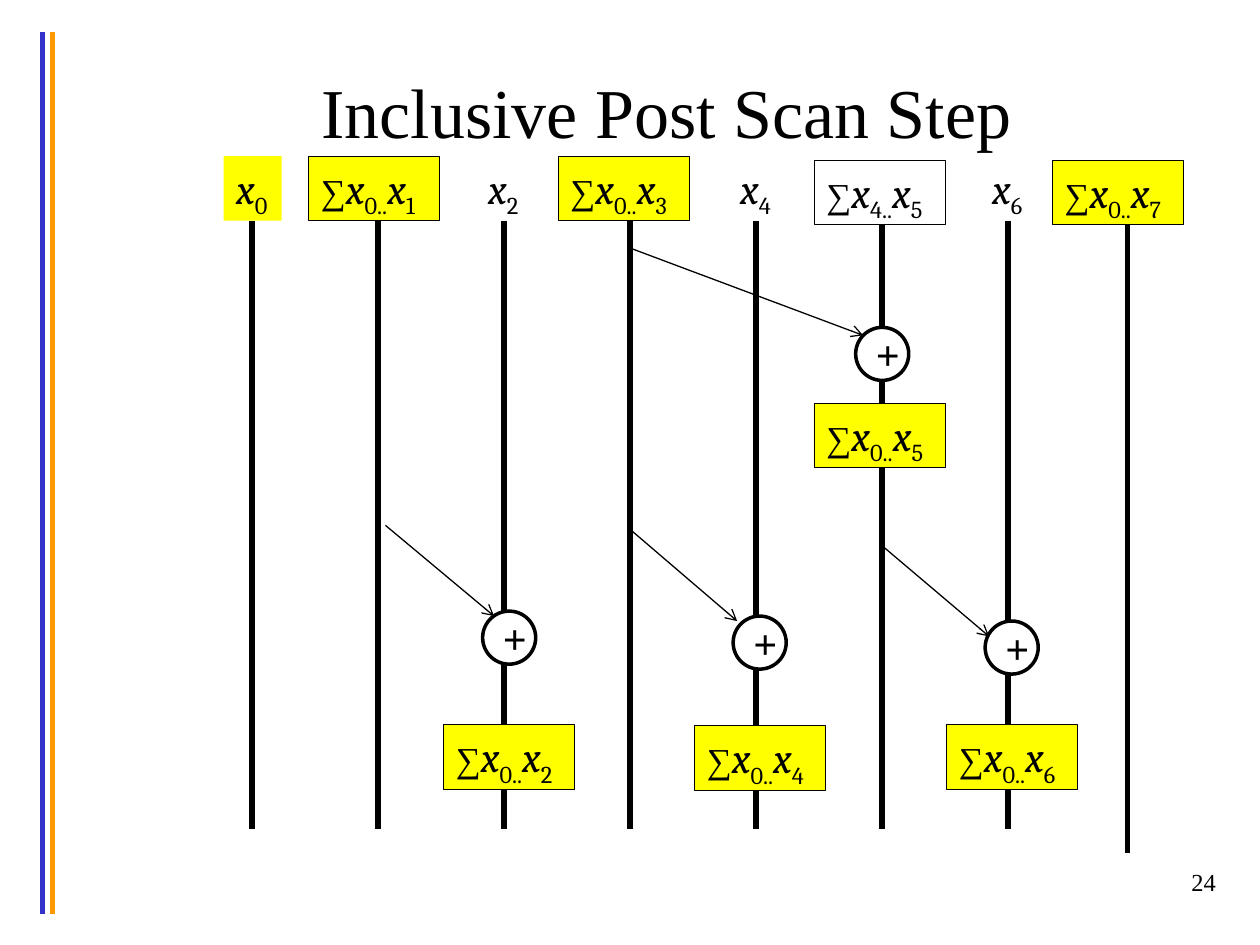
from pptx import Presentation
from pptx.dml.color import RGBColor
from pptx.enum.shapes import MSO_CONNECTOR, MSO_SHAPE
from pptx.enum.text import MSO_ANCHOR, MSO_AUTO_SIZE, PP_ALIGN
from pptx.oxml.ns import qn
from pptx.util import Cm, Pt
from lxml import etree

STRAIGHT = MSO_CONNECTOR.STRAIGHT
OVAL = MSO_SHAPE.OVAL
MIDDLE = MSO_ANCHOR.MIDDLE
GROW = MSO_AUTO_SIZE.SHAPE_TO_FIT_TEXT
CENTER, RIGHT = PP_ALIGN.CENTER, PP_ALIGN.RIGHT
SERIF, MATH = "Times New Roman", "Cambria"
BLACK, WHITE, YELLOW = "000000", "FFFFFF", "FFFF00"


def rgb(value):
    return RGBColor.from_string(value)


def draw_line(page, start, end, width, color=BLACK):
    line = page.shapes.add_connector(
        STRAIGHT, Cm(start[0]), Cm(start[1]), Cm(end[0]), Cm(end[1]))
    line.line.width = Pt(width)
    line.line.color.rgb = rgb(color)
    etree.SubElement(line._element.spPr, qn("a:effectLst"))
    return line


deck = Presentation()
deck.slide_width, deck.slide_height = Cm(25.4), Cm(19.05)
page = deck.slides.add_slide(deck.slide_layouts[5])

for x, color in [(0.85, "3333CC"), (1.06, "FF9900")]:
    draw_line(page, (x, 0.64), (x, 18.42), 3, color)

title = page.shapes.title
title.left, title.top, title.width, title.height = Cm(1.9), Cm(0.64), Cm(23.07), Cm(3.18)
title.text_frame.text = "Inclusive Post Scan Step"
title.text_frame.vertical_anchor = MIDDLE
number = page.shapes.add_textbox(Cm(19.47), Cm(17.36), Cm(5.29), Cm(1.27))
number.text_frame.word_wrap = True
number.text_frame.text = "24"
for box, size, align in [(title, 40, CENTER), (number, 14, RIGHT)]:
    para = box.text_frame.paragraphs[0]
    para.alignment = align
    para.font.name, para.font.size = SERIF, Pt(size)
    para.font.color.rgb = rgb(BLACK)

columns = [5.08 + 2.54 * i for i in range(7)]
for x in columns:
    draw_line(page, (x, 4.45), (x, 16.71), 3)
draw_line(page, (22.73, 4.5), (22.73, 17.2), 3)

labels = [(columns[i] - 0.57, 3.15, None, i, None if i else YELLOW) for i in (0, 2, 4, 6)]
labels += [
    (6.22, 3.15, 0, 1, YELLOW),
    (11.25, 3.15, 0, 3, YELLOW),
    (16.41, 3.23, 4, 5, WHITE),
    (21.21, 3.23, 0, 7, YELLOW),
    (16.41, 8.13, 0, 5, YELLOW),
    (8.94, 14.61, 0, 2, YELLOW),
    (14, 14.63, 0, 4, YELLOW),
    (19.08, 14.61, 0, 6, YELLOW),
]
for left, top, first, last, fill in labels:
    is_sum = first is not None
    box = page.shapes.add_textbox(Cm(left), Cm(top), Cm(2.64 if is_sum else 1.17), Cm(1.3))
    box.text_frame.word_wrap = False
    box.text_frame.auto_size = GROW
    if fill:
        box.fill.solid()
        box.fill.fore_color.rgb = rgb(fill)
    parts = ["x", str(last)]
    if is_sum:
        box.line.color.rgb = rgb(BLACK)
        box.line.width = Pt(0.25)
        parts = ["∑", "x", f"{first}.."] + parts
    para = box.text_frame.paragraphs[0]
    para.font.color.rgb = rgb(BLACK)
    for part in parts:
        span = para.add_run()
        span.text = part
        span.font.name = SERIF if part == "∑" else MATH
        span.font.size = Pt(20 if part == "∑" else 24)
        span.font.italic = part in ("∑", "x")
        if part not in ("∑", "x"):
            span._r.get_or_add_rPr().set("baseline", "-25000")

for left, top in [(17.25, 6.6), (9.73, 12.32), (14.78, 12.42), (19.86, 12.52)]:
    adder = page.shapes.add_shape(OVAL, Cm(left), Cm(top), Cm(1.07), Cm(1.07))
    adder.shadow.inherit = False
    adder.fill.solid()
    adder.fill.fore_color.rgb = rgb(WHITE)
    adder.line.color.rgb = rgb(BLACK)
    adder.line.width = Pt(2)
    adder.text_frame.text = "+"
    adder.text_frame.vertical_anchor = MIDDLE
    para = adder.text_frame.paragraphs[0]
    para.alignment = CENTER
    para.font.name, para.font.size, para.font.bold = SERIF, Pt(24), True
    para.font.color.rgb = rgb(BLACK)

arrows = [
    ((12.7, 5), (17.4, 6.76)),
    ((7.77, 10.59), (9.96, 12.42)),
    ((12.7, 10.67), (14.86, 12.52)),
    ((17.78, 11), (19.94, 12.83)),
]
for start, end in arrows:
    arrow = draw_line(page, start, end, 0.75)
    etree.SubElement(arrow.line._get_or_add_ln(), qn("a:tailEnd"), type="arrow")

deck.save("out.pptx")
